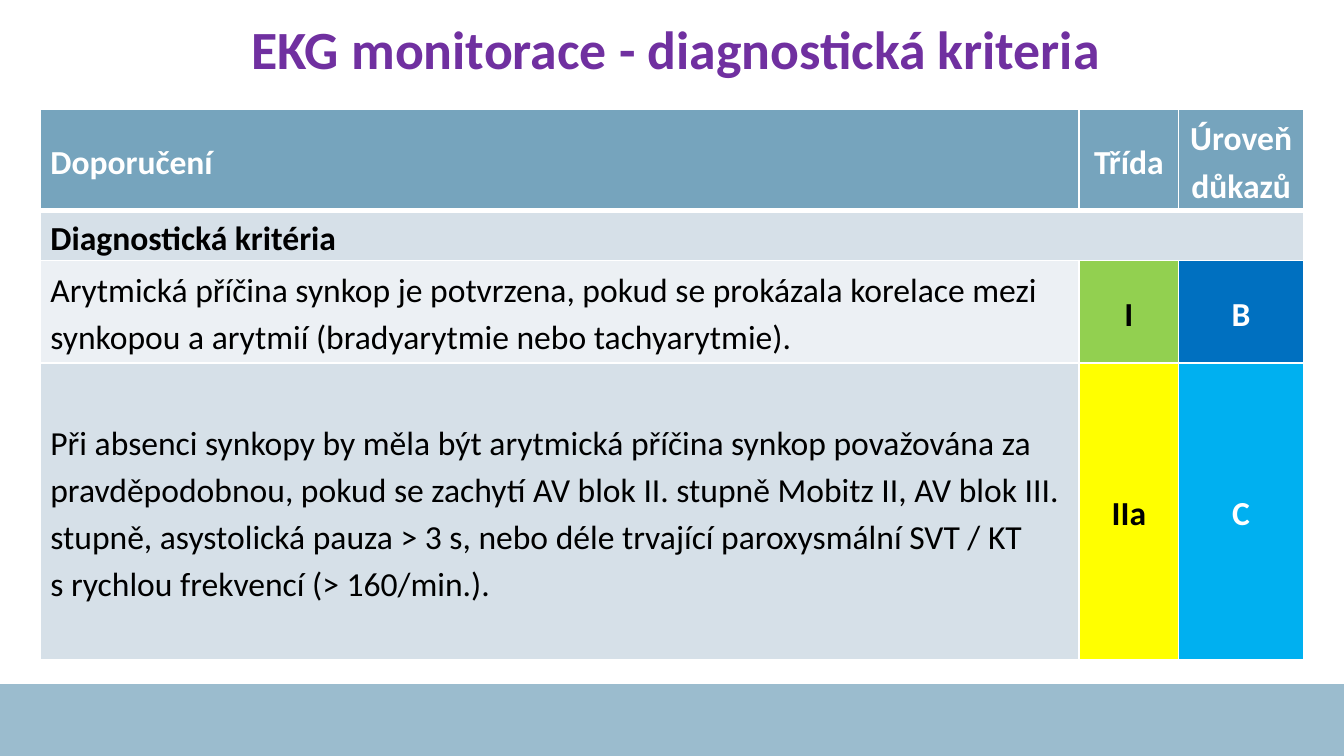
from lxml import etree
from pptx import Presentation
from pptx.dml.color import RGBColor
from pptx.enum.shapes import MSO_SHAPE
from pptx.enum.text import MSO_ANCHOR, PP_ALIGN
from pptx.oxml.ns import qn
from pptx.util import Inches, Pt

RECTANGLE = MSO_SHAPE.RECTANGLE
MIDDLE = MSO_ANCHOR.MIDDLE
LEFT, CENTER = PP_ALIGN.LEFT, PP_ALIGN.CENTER

PAGE_WIDTH = 10
PAGE_HEIGHT = PAGE_WIDTH * 9 / 16

FONT = "Calibri"
WHITE = RGBColor(0xFF, 0xFF, 0xFF)
BLACK = RGBColor(0x00, 0x00, 0x00)
PURPLE = RGBColor(0x70, 0x30, 0xA0)
STEEL = RGBColor(0x76, 0xA4, 0xBD)
BAND_DARK = RGBColor(0xD6, 0xE0, 0xE8)
BAND_LIGHT = RGBColor(0xEC, 0xF0, 0xF4)
GREEN = RGBColor(0x92, 0xD0, 0x50)
YELLOW = RGBColor(0xFF, 0xFF, 0x00)
BLUE = RGBColor(0x00, 0x70, 0xC0)
SKY = RGBColor(0x00, 0xB0, 0xF0)

# Keeps one-letter Czech words on the line of the next word
HARD_SPACE = chr(160)

COLUMN_WIDTHS = [7.73, 0.74, 0.93]
ROW_HEIGHTS = [0.76, 0.37, 0.76, 2.21]

# Each cell: paragraphs, fill, text colour, bold
ROWS = [
    [(["Doporučení"], STEEL, WHITE, True),
     (["Třída"], STEEL, WHITE, True),
     (["Úroveň\ndůkazů"], STEEL, WHITE, True)],
    [(["Diagnostická kritéria"], BAND_DARK, BLACK, True)],
    [(["Arytmická příčina synkop je potvrzena, pokud se prokázala korelace "
       f"mezi synkopou a{HARD_SPACE}arytmií (bradyarytmie nebo tachyarytmie)."],
      BAND_LIGHT, BLACK, False),
     (["I"], GREEN, BLACK, True),
     (["B"], BLUE, WHITE, True)],
    [(["Při absenci synkopy by měla být arytmická příčina synkop považována za",
       "pravděpodobnou, pokud se zachytí AV blok II. stupně Mobitz II, "
       "AV blok III. stupně, asystolická pauza > 3 s, nebo déle trvající "
       f"paroxysmální SVT / KT s{HARD_SPACE}rychlou frekvencí (> 160/min.)."],
      BAND_DARK, BLACK, False),
     (["IIa"], YELLOW, BLACK, True),
     (["C"], SKY, WHITE, True)],
]


def style_paragraph(para, size, color, bold, align, spacing):
    para.alignment = align
    para.line_spacing = spacing
    para.font.name = FONT
    para.font.size = Pt(size)
    para.font.bold = bold
    para.font.color.rgb = color


def add_footer_band(page, left, top, width, height):
    band = page.shapes.add_shape(RECTANGLE, Inches(left), Inches(top),
                                 Inches(width), Inches(height))
    band.shadow.inherit = False
    band.line.fill.background()
    band.fill.solid()
    band.fill.fore_color.rgb = STEEL
    # 73 % opacity
    color = band._element.spPr.find(qn("a:solidFill")).find(qn("a:srgbClr"))
    etree.SubElement(color, qn("a:alpha"), val="73000")


def add_title(page, left, top, width, height):
    box = page.shapes.add_textbox(Inches(left), Inches(top),
                                  Inches(width), Inches(height))
    frame = box.text_frame
    frame.word_wrap = True
    frame.vertical_anchor = MIDDLE
    frame.margin_left = frame.margin_right = Inches(0.06)
    frame.margin_top = frame.margin_bottom = Inches(0.03)
    para = frame.paragraphs[0]
    para.text = "EKG monitorace - diagnostická kriteria"
    style_paragraph(para, 28.8, PURPLE, True, CENTER, 0.9)


def set_borders(cell, widths):
    properties = cell._tc.get_or_add_tcPr()
    for side, width in widths.items():
        line = etree.SubElement(properties, qn(f"a:ln{side}"), w=str(Pt(width)))
        fill = etree.SubElement(line, qn("a:solidFill"))
        etree.SubElement(fill, qn("a:srgbClr"), val=str(WHITE))


def fill_cell(cell, paragraphs, fill, color, bold, align):
    cell.fill.solid()
    cell.fill.fore_color.rgb = fill
    cell.vertical_anchor = MIDDLE
    cell.margin_left = cell.margin_right = Pt(5.4)
    cell.margin_top = cell.margin_bottom = 0
    frame = cell.text_frame
    for index, text in enumerate(paragraphs):
        para = frame.add_paragraph() if index else frame.paragraphs[0]
        para.text = text
        style_paragraph(para, 18, color, bold, align, 1.15)


def add_criteria_table(page, left, top):
    table = page.shapes.add_table(
        len(ROW_HEIGHTS), len(COLUMN_WIDTHS), Inches(left), Inches(top),
        Inches(sum(COLUMN_WIDTHS)), Inches(sum(ROW_HEIGHTS))).table
    for column, width in zip(table.columns, COLUMN_WIDTHS):
        column.width = Inches(width)
    for row, height in zip(table.rows, ROW_HEIGHTS):
        row.height = Inches(height)

    # Thin white grid, with a thick rule under the header
    for row_index in range(len(ROW_HEIGHTS)):
        above = 3 if row_index == 1 else 1
        below = 3 if row_index == 0 else 1
        for column_index in range(len(COLUMN_WIDTHS)):
            set_borders(table.cell(row_index, column_index),
                        {"L": 1, "R": 1, "T": above, "B": below})

    # The section heading spans the whole row
    table.cell(1, 0).merge(table.cell(1, 2))
    for row_index, row in enumerate(ROWS):
        for column_index, content in enumerate(row):
            fill_cell(table.cell(row_index, column_index), *content,
                      CENTER if column_index else LEFT)


def main():
    deck = Presentation()
    deck.slide_width = Inches(PAGE_WIDTH)
    deck.slide_height = Inches(PAGE_HEIGHT)
    page = deck.slides.add_slide(deck.slide_layouts[6])
    footer_top = 5.09
    add_footer_band(page, 0, footer_top, PAGE_WIDTH, PAGE_HEIGHT - footer_top)
    add_title(page, 0.5, 0.14, 9.06, 0.5)
    add_criteria_table(page, 0.3, 0.81)
    deck.save("out.pptx")


if __name__ == "__main__":
    main()
